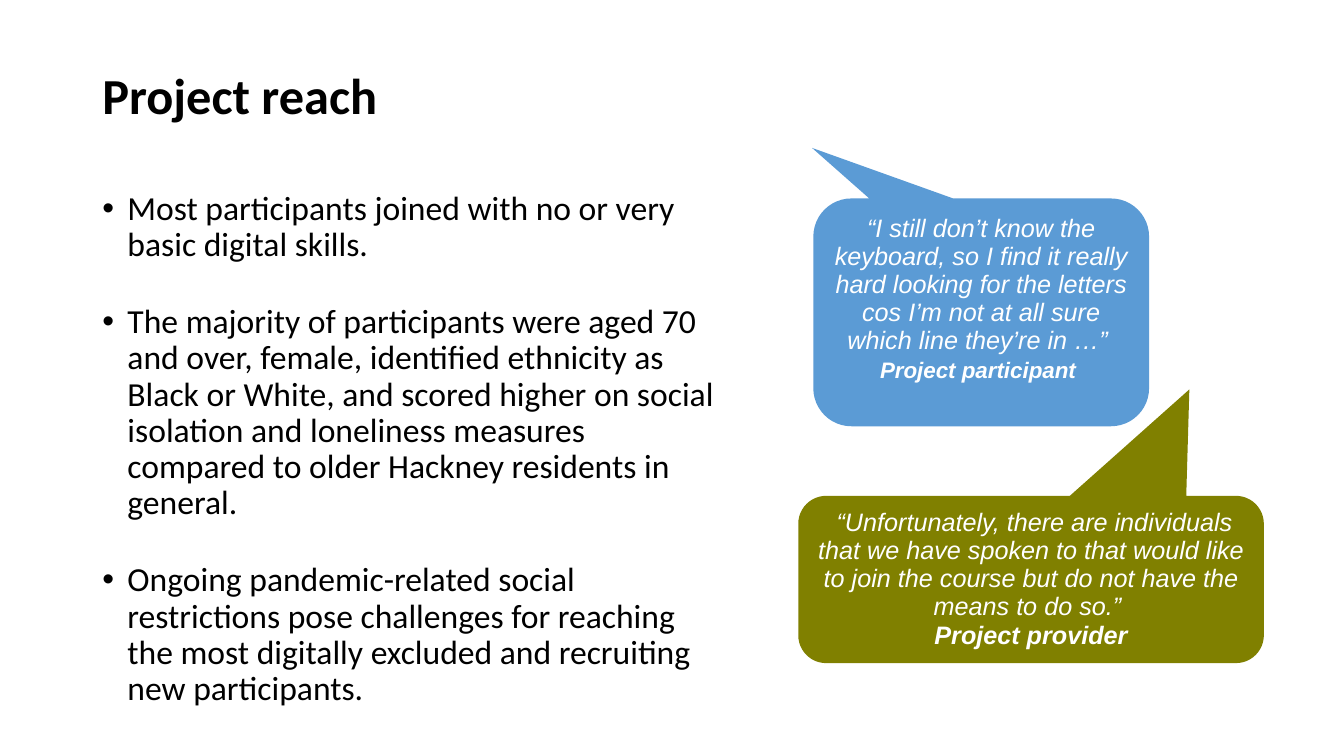
from lxml import etree
from pptx import Presentation
from pptx.dml.color import RGBColor
from pptx.enum.shapes import MSO_SHAPE
from pptx.enum.text import MSO_ANCHOR, PP_ALIGN
from pptx.oxml.ns import qn
from pptx.util import Pt

BUBBLE = MSO_SHAPE.ROUNDED_RECTANGULAR_CALLOUT
TOP, MIDDLE = MSO_ANCHOR.TOP, MSO_ANCHOR.MIDDLE
CENTER = PP_ALIGN.CENTER
COLORS = {"ink": "000000", "paper": "FFFFFF", "blue": "5B9BD5", "olive": "808000"}

HEADING = "Project reach"
POINTS = [
    "Most participants joined with no or very basic digital skills.",
    "The majority of participants were aged 70 and over, female, identified "
    "ethnicity as Black or White, and scored higher on social isolation and "
    "loneliness measures compared to older Hackney residents in general.",
    "Ongoing pandemic-related social restrictions pose challenges for reaching "
    "the most digitally excluded and recruiting new participants.",
]
QUOTES = [
    ((581, 141.8, 239.8, 162.7), (-0.504, -0.722, 0.167), "blue",
     "“I still don’t know the keyboard, so I find it really hard looking for "
     "the letters cos I’m not at all sure which line they’re in …” ",
     "Project participant ", 16),
    ((570.2, 354.2, 332.6, 119.5), (0.34, -1.136, 0.167), "olive",
     " “Unfortunately, there are individuals that we have spoken to that would "
     "like to join the course but do not have the means to do so.” ",
     "Project provider", 18),
]


def color(key):
    return RGBColor.from_string(COLORS[key])


def add_run(para, text, face, size, key, bold=False, slant=False):
    run = para.add_run()
    run.text = text
    font = run.font
    font.name, font.size = face, Pt(size)
    font.bold, font.italic = bold, slant
    font.color.rgb = color(key)


def add_bullet(para, indent):
    props = para._p.get_or_add_pPr()
    props.set("marL", str(Pt(indent)))
    props.set("indent", str(-Pt(indent)))
    etree.SubElement(props, qn("a:buFont")).set("typeface", "Arial")
    etree.SubElement(props, qn("a:buChar")).set("char", "•")


def add_frame(slide, box, anchor):
    frame = slide.shapes.add_textbox(*map(Pt, box)).text_frame
    frame.word_wrap = True
    frame.vertical_anchor = anchor
    return frame


def add_title(slide, box, text):
    para = add_frame(slide, box, MIDDLE).paragraphs[0]
    para.line_spacing = 0.9
    add_run(para, text, "Calibri", 36, "ink", bold=True)


def add_list(slide, box, items):
    frame = add_frame(slide, box, TOP)
    for i, item in enumerate(items):
        para = frame.add_paragraph() if i else frame.paragraphs[0]
        para.line_spacing = 0.9
        para.space_before = Pt(29 if i else 0)
        add_bullet(para, 18)
        add_run(para, item, "Calibri", 24, "ink")


def add_quote(slide, box, tail, fill, words, source, size):
    shape = slide.shapes.add_shape(BUBBLE, *map(Pt, box))
    for i, value in enumerate(tail):
        shape.adjustments[i] = value
    shape.shadow.inherit = False
    shape.fill.solid()
    shape.fill.fore_color.rgb = color(fill)
    shape.line.fill.background()
    frame = shape.text_frame
    frame.word_wrap = True
    frame.vertical_anchor = TOP
    quote, credit = frame.paragraphs[0], frame.add_paragraph()
    for para in (quote, credit):
        para.alignment = CENTER
        para.line_spacing = Pt(20)
    add_run(quote, words, "Arial", 18, "paper", slant=True)
    add_run(credit, source, "Arial", size, "paper", bold=True, slant=True)


def main():
    deck = Presentation()
    deck.slide_width, deck.slide_height = Pt(960), Pt(540)
    slide = deck.slides.add_slide(deck.slide_layouts[6])
    add_title(slide, (66, 18, 828, 104.4), HEADING)
    add_list(slide, (66, 133.2, 460.8, 342.7), POINTS)
    for quote in QUOTES:
        add_quote(slide, *quote)
    deck.save("out.pptx")


if __name__ == "__main__":
    main()
